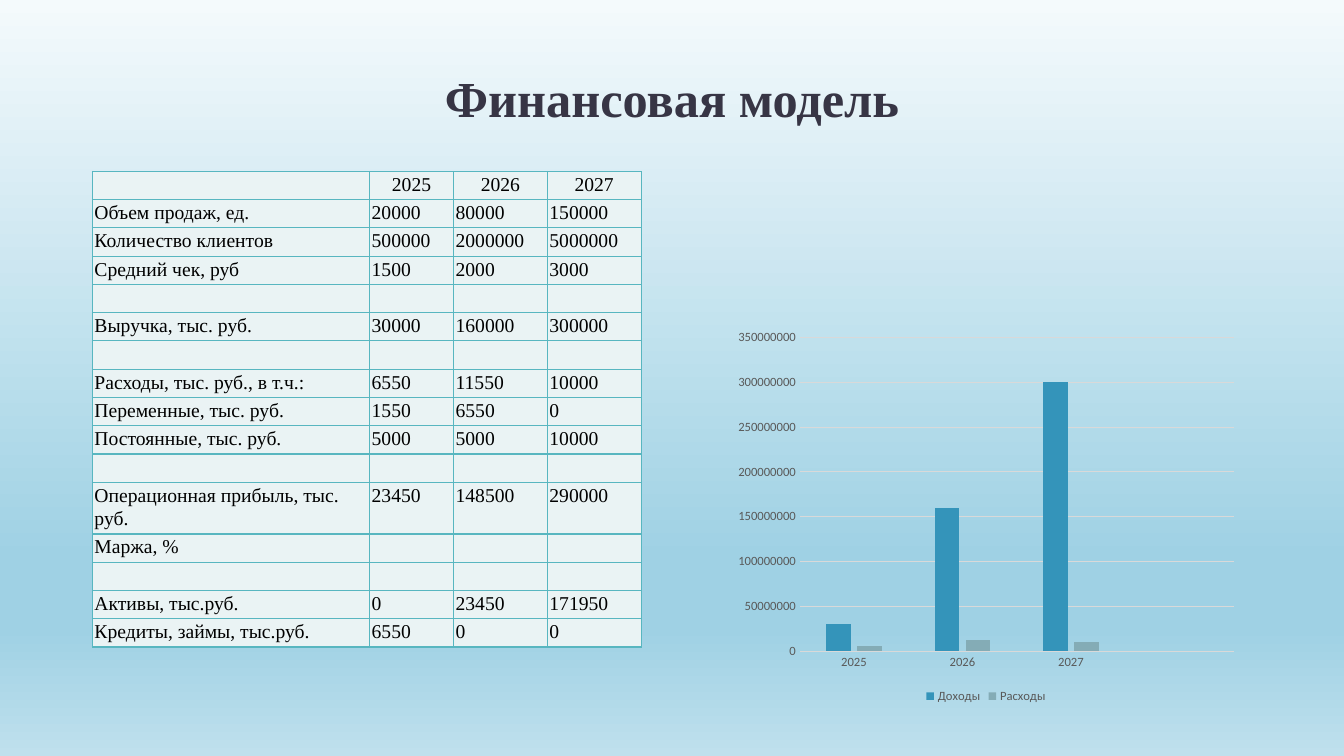
from copy import deepcopy

from lxml.etree import SubElement
from pptx import Presentation
from pptx.chart.data import CategoryChartData
from pptx.dml.color import RGBColor
from pptx.enum.chart import XL_CHART_TYPE, XL_LEGEND_POSITION, XL_TICK_MARK
from pptx.enum.text import MSO_ANCHOR, PP_ALIGN
from pptx.oxml.ns import qn
from pptx.util import Pt

COLORS = {
    "title": "373545", "text": "000000", "cell": "EAF3F4", "border": "58B6C0",
    "axis": "595959", "grid": "D9D9D9", "income": "3494BA", "costs": "84ACB6",
}
BACKGROUND_STOPS = [(0, "F4FAFC"), (0.74, "9FD1E4"), (0.83, "9FD1E4"), (1, "BFE0ED")]
SERIF = "Times New Roman"
YEARS = ["2025", "2026", "2027"]
BLANK = [""] * 4
TABLE_ROWS = [
    ["", *YEARS],
    ["Объем продаж, ед.", "20000", "80000", "150000"],
    ["Количество клиентов", "500000", "2000000", "5000000"],
    ["Средний чек, руб", "1500", "2000", "3000"],
    BLANK,
    ["Выручка, тыс. руб.", "30000", "160000", "300000"],
    BLANK,
    ["Расходы, тыс. руб., в т.ч.:", "6550", "11550", "10000"],
    ["Переменные, тыс. руб.", "1550", "6550", "0"],
    ["Постоянные, тыс. руб.", "5000", "5000", "10000"],
    BLANK,
    ["Операционная прибыль, тыс. руб.", "23450", "148500", "290000"],
    ["Маржа, %", "", "", ""],
    BLANK,
    ["Активы, тыс.руб.", "0", "23450", "171950"],
    ["Кредиты, займы, тыс.руб.", "6550", "0", "0"],
]
COLUMN_WIDTHS = [198, 60, 67, 67]
ROW_HEIGHT, TALL_ROW_HEIGHT, TALL_ROW = 20.2, 37, 11
SERIES = [
    ("Доходы", "income", [30000000, 160000000, 300000000, None]),
    ("Расходы", "costs", [6000000, 12000000, 10000000, None]),
]


def rgb(name):
    return RGBColor.from_string(COLORS[name])


def set_all(target, **values):
    """Set each given attribute on the target."""
    for name, value in values.items():
        setattr(target, name, value)


def set_font(font, size, color, face, bold=False):
    set_all(font, size=Pt(size), name=face, bold=bold)
    font.color.rgb = rgb(color)


def paint_background(page):
    fill = page.background.fill
    fill.gradient()
    fill.gradient_angle = 270
    stop_list = fill.gradient_stops[0]._gs.getparent()
    for extra in range(len(BACKGROUND_STOPS) - len(stop_list)):
        stop_list.append(deepcopy(stop_list[0]))
    for stop, (position, color) in zip(fill.gradient_stops, BACKGROUND_STOPS):
        stop.position = position
        stop.color.rgb = RGBColor.from_string(color)


def add_title(page, left, top, width, height):
    box = page.shapes.add_textbox(Pt(left), Pt(top), Pt(width), Pt(height))
    set_all(box.text_frame, word_wrap=True, vertical_anchor=MSO_ANCHOR.BOTTOM)
    para = box.text_frame.paragraphs[0]
    set_all(para, alignment=PP_ALIGN.CENTER, line_spacing=0.8)
    span = para.add_run()
    span.text = "Финансовая модель"
    set_font(span.font, 36, "title", SERIF, bold=True)


def add_borders(cell):
    properties = cell._tc.get_or_add_tcPr()
    for side in ("a:lnL", "a:lnR", "a:lnT", "a:lnB"):
        line = SubElement(properties, qn(side), w=str(Pt(1)))
        fill = SubElement(line, qn("a:solidFill"))
        SubElement(fill, qn("a:srgbClr"), val=COLORS["border"])


def fill_cell(cell, text, alignment):
    add_borders(cell)
    cell.fill.solid()
    cell.fill.fore_color.rgb = rgb("cell")
    set_all(cell, margin_left=Pt(1.5), margin_right=Pt(1.5),
            margin_top=Pt(0.7), margin_bottom=0)
    para = cell.text_frame.paragraphs[0]
    set_all(para, alignment=alignment, line_spacing=1.07, space_after=Pt(8))
    if text:
        span = para.add_run()
        span.text = text
        set_font(span.font, 14, "text", SERIF)
    else:
        SubElement(para._p, qn("a:endParaRPr"), sz="1400")


def add_finance_table(page, left, top):
    heights = [ROW_HEIGHT] * len(TABLE_ROWS)
    heights[TALL_ROW] = TALL_ROW_HEIGHT
    frame = page.shapes.add_table(
        len(TABLE_ROWS), len(COLUMN_WIDTHS), Pt(left), Pt(top),
        Pt(sum(COLUMN_WIDTHS)), Pt(sum(heights)))
    table = frame.table
    set_all(table, first_row=False, horz_banding=False)
    for column, width in zip(table.columns, COLUMN_WIDTHS):
        column.width = Pt(width)
    for index, (row, height, texts) in enumerate(zip(table.rows, heights, TABLE_ROWS)):
        row.height = Pt(height)
        alignment = PP_ALIGN.LEFT if index else PP_ALIGN.CENTER
        for cell, text in zip(row.cells, texts):
            fill_cell(cell, text, alignment)


def style_axis(axis, line):
    set_all(axis, major_tick_mark=XL_TICK_MARK.NONE, minor_tick_mark=XL_TICK_MARK.NONE)
    set_font(axis.tick_labels.font, 9, "axis", "Calibri")
    line.color.rgb = rgb("grid")
    line.width = Pt(0.75)


def add_income_chart(page, left, top, width, height):
    data = CategoryChartData()
    data.categories = [*YEARS, ""]
    for name, color, values in SERIES:
        data.add_series(name, values)
    chart = page.shapes.add_chart(
        XL_CHART_TYPE.COLUMN_CLUSTERED, Pt(left), Pt(top), Pt(width), Pt(height), data).chart
    set_all(chart, has_title=False, has_legend=True)
    set_font(chart.font, 10, "text", "Calibri")
    set_all(chart.legend, position=XL_LEGEND_POSITION.BOTTOM, include_in_layout=False)
    set_font(chart.legend.font, 9, "axis", "Calibri")
    style_axis(chart.category_axis, chart.category_axis.format.line)
    style_axis(chart.value_axis, chart.value_axis.major_gridlines.format.line)
    chart.value_axis.format.line.fill.background()
    plot = chart.plots[0]
    set_all(plot, gap_width=219, overlap=-27, vary_by_categories=False)
    for series, (name, color, values) in zip(plot.series, SERIES):
        series.format.fill.solid()
        series.format.fill.fore_color.rgb = rgb(color)


def main():
    deck = Presentation()
    set_all(deck, slide_width=Pt(960), slide_height=Pt(540))
    page = deck.slides.add_slide(deck.slide_layouts[6])
    paint_background(page)
    add_title(page, 0, 0, 960, 94.3)
    add_finance_table(page, 66, 122.4)
    add_income_chart(page, 520, 230.4, 368.6, 275)
    deck.save("out.pptx")


if __name__ == "__main__":
    main()
